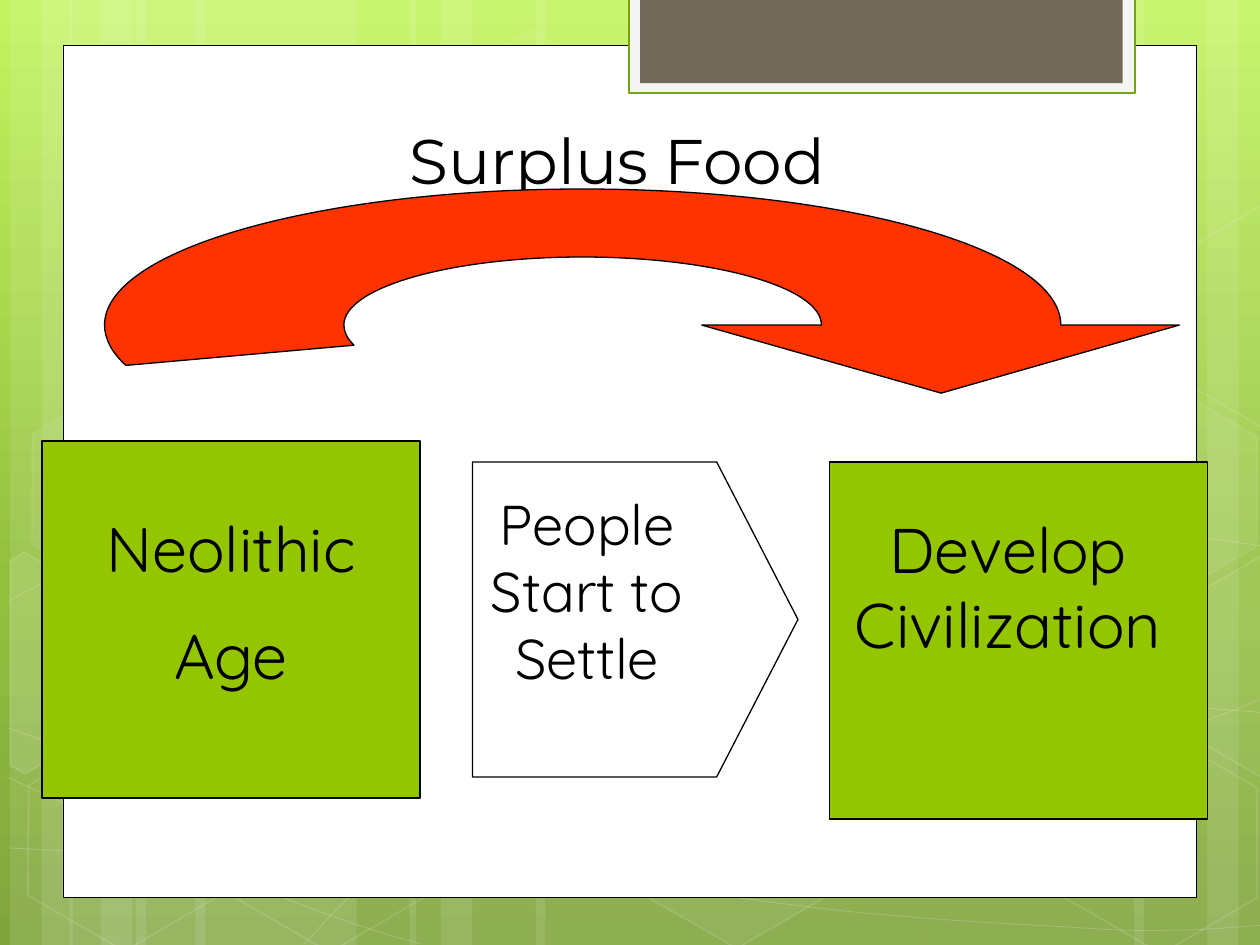
import math

from lxml import etree
from pptx import Presentation
from pptx.dml.color import RGBColor
from pptx.enum import shapes, text
from pptx.oxml.ns import qn
from pptx.util import Inches, Pt

COLORS = {
    "white": "FFFFFF", "black": "000000", "green": "94C600", "red": "FF3300",
    "tab": "F5F5F5", "tab_line": "74A510", "brown": "71685A",
    "sky": "C3F35F", "leaf": "93BF3F", "moss": "81A53E",
}
SHAPE = shapes.MSO_SHAPE
TILT = 30

# Translucent stripes: left, width, rotation
STRIPES = [(1.08, 1.75, 0), (0.08, 0.5, 0), (0.33, 0.83, 0), (1.55, 1.75, 0),
           (0.55, 0.5, 0), (0.8, 0.83, 0), (7.33, 1.75, 180), (9.58, 0.5, 180),
           (9, 0.83, 180), (4.25, 3.08, 0), (3.25, 0.5, 0), (3.5, 0.83, 0)]

# Thin waves: start point, then Bezier control points in threes
WAVES = [
    [(0.07, 6.73), (0.61, 6.76), (1.15, 6.79), (1.9, 6.78), (2.65, 6.77),
     (3.58, 6.75), (4.58, 6.65), (5.58, 6.55), (7, 6.36), (7.92, 6.17),
     (8.83, 5.98), (9.77, 5.68), (10.07, 5.51)],
    [(0.07, 4.77), (0.36, 4.61), (0.65, 4.46), (1.21, 4.31), (1.78, 4.16),
     (2.59, 3.94), (3.47, 3.87), (4.36, 3.8), (5.44, 3.79), (6.54, 3.87),
     (7.64, 3.95), (9.47, 4.26), (10.07, 4.34)],
    [(0.06, 6.17), (1.27, 6.72), (2.47, 7.27), (3.34, 7.49)],
    [(0.07, 5.78), (0.38, 5.89), (0.7, 6), (1.28, 6.16), (1.86, 6.31),
     (2.73, 6.56), (3.57, 6.73), (4.4, 6.9), (5.45, 7.08), (6.28, 7.18),
     (7.11, 7.29), (8, 7.33), (8.53, 7.36), (9.05, 7.4), (9.19, 7.38),
     (9.45, 7.38), (9.71, 7.37), (9.89, 7.35), (10.07, 7.34)],
    [(2.42, 7.49), (2.6, 7.29), (2.78, 7.09), (3.02, 6.91), (3.26, 6.73),
     (3.6, 6.53), (3.88, 6.39), (4.16, 6.25), (4.33, 6.19), (4.7, 6.09),
     (5.06, 5.99), (5.73, 5.85), (6.08, 5.78), (6.44, 5.71), (6.49, 5.71),
     (6.8, 5.69), (7.11, 5.66), (7.6, 5.63), (7.94, 5.62), (8.29, 5.61),
     (8.86, 5.62), (9.53, 5.62), (9.71, 5.63), (9.97, 5.65), (10.06, 5.66)],
]

# Whole hexagons: left, top, fill alpha, line alpha
HEXAGONS = [(3.34, 0.36, 4, 8), (4.97, 5.89, 6, 12), (0.11, 5.91, 0, 12),
            (0.14, 3.12, 7, 8), (1.74, 5.92, 0, 12), (8.34, 5.93, 0, 12),
            (8.34, 3.14, 7, 8)]

# Hexagons cut by the slide edge: centre, points, fill alpha
CUT_RIGHT = [(9.26, 4.85), (10.01, 4.41), (10.09, 4.46), (10.09, 6.13),
             (10.02, 6.17), (9.26, 5.73)]
CUT_HEXAGONS = [
    ((0.36, 5.35), [(0.08, 4.45), (0.19, 4.38), (0.96, 4.82), (0.95, 5.7),
                    (0.2, 6.14), (0.08, 6.07)], 10),
    ((9.85, 5.2), CUT_RIGHT, 4),
    ((9.85, 2.42), [(x, y - 2.78) for x, y in CUT_RIGHT], 0),
]

# Curved arrow: inner arc, tail, outer arc, head
ARROW = [(6.52, 2.58), (6.52, 2.28), (5.67, 2.04), (4.62, 2.04),
         (3.58, 2.04), (2.73, 2.28), (2.73, 2.58),
         (2.73, 2.64), (2.76, 2.69), (2.81, 2.74), (1, 2.9),
         (0.89, 2.8), (0.83, 2.69), (0.83, 2.58),
         (0.83, 1.98), (2.53, 1.5), (4.62, 1.5),
         (6.72, 1.5), (8.42, 1.98), (8.42, 2.58),
         (9.36, 2.58), (7.47, 3.12), (5.57, 2.58)]
ARROW_CURVES = (0, 3, 6, 10, 13, 16)


def turn(points, center, degrees):
    """Points turned clockwise about a centre."""
    cx, cy = center
    c, s = math.cos(math.radians(degrees)), math.sin(math.radians(degrees))
    return [(cx + (x - cx) * c - (y - cy) * s, cy + (x - cx) * s + (y - cy) * c)
            for x, y in points]


def paint(fill, color, alpha=100):
    if color is None or alpha == 0:
        fill.background()
        return
    fill.solid()
    fill.fore_color.rgb = RGBColor.from_string(COLORS[color])
    if alpha < 100:
        rgb = fill._xPr.find(qn("a:solidFill"))[0]
        etree.SubElement(rgb, qn("a:alpha"), val=str(alpha * 1000))


def write(tf, *paragraphs, size=36, font="Quicksand", color="black",
          gap=0, anchor=text.MSO_ANCHOR.TOP, bottom=0.05):
    tf.word_wrap = True
    tf.auto_size = text.MSO_AUTO_SIZE.NONE
    tf.vertical_anchor = anchor
    tf.margin_left = tf.margin_right = Inches(0.1)
    tf.margin_top, tf.margin_bottom = Inches(0.05), Inches(bottom)
    for i, words in enumerate(paragraphs):
        p = tf.add_paragraph() if i else tf.paragraphs[0]
        p.text = words
        p.alignment = text.PP_ALIGN.CENTER
        p.space_before = Pt(gap if i else 0)
        for r in p.runs:
            r.font.size, r.font.name = Pt(size), font
            r.font.color.rgb = RGBColor.from_string(COLORS[color])


class Deck:
    def __init__(self, width, height):
        self.prs = Presentation()
        self.prs.slide_width, self.prs.slide_height = Inches(width), Inches(height)
        self.s = self.prs.slides.add_slide(self.prs.slide_layouts[5])

    def background(self, *stops):
        fill = self.s.background.fill
        fill.gradient()
        fill.gradient_angle = 270
        gs_list = self.s._element.find(".//" + qn("a:gsLst"))
        for gs in list(gs_list):
            gs_list.remove(gs)
        for pos, color in stops:
            gs = etree.SubElement(gs_list, qn("a:gs"), pos=str(pos * 1000))
            etree.SubElement(gs, qn("a:srgbClr"), val=COLORS[color])

    def style(self, sp, fill, alpha, line, weight, line_alpha):
        sp.shadow.inherit = False
        paint(sp.fill, fill, alpha)
        paint(sp.line.fill, line, line_alpha)
        if line:
            sp.line.width = Pt(weight)
        return sp

    def shape(self, kind, x, y, w, h, fill=None, alpha=100, line=None,
              weight=0.75, line_alpha=100):
        sp = self.s.shapes.add_shape(kind, *map(Inches, (x, y, w, h)))
        return self.style(sp, fill, alpha, line, weight, line_alpha)

    def outline(self, points, fill=None, alpha=100, line=None, weight=0.75,
                line_alpha=100, close=True, curves=()):
        """Segments from each index in curves on join by threes into a Bezier."""
        points = [(Inches(x), Inches(y)) for x, y in points]
        builder = self.s.shapes.build_freeform(*points[0])
        builder.add_line_segments(points[1:], close=close)
        sp = builder.convert_to_shape()
        lines = list(sp._element.iter(qn("a:lnTo")))
        for i in curves:
            lines[i].tag = qn("a:cubicBezTo")
            for extra in lines[i + 1:i + 3]:
                lines[i].append(extra[0])
                extra.getparent().remove(extra)
        return self.style(sp, fill, alpha, line, weight, line_alpha)

    def title(self, x, y, w, h, words, **fmt):
        sp = self.s.shapes.title
        sp.left, sp.top, sp.width, sp.height = map(Inches, (x, y, w, h))
        self.s.shapes._spTree.append(sp._element)  # above the backdrop
        write(sp.text_frame, words, **fmt)

    def label(self, x, y, w, h, words, **fmt):
        sp = self.s.shapes.add_textbox(*map(Inches, (x, y, w, h)))
        write(sp.text_frame, words, **fmt)


def main():
    deck = Deck(10, 7.5)

    # Backdrop
    deck.background((0, "sky"), (62, "leaf"), (100, "moss"))
    for x, w, rotation in STRIPES:
        deck.shape(SHAPE.RECTANGLE, x, 0, w, 7.5, "white", 10).rotation = rotation
    for wave in WAVES:
        deck.outline(wave, line="white", weight=0.5, line_alpha=20,
                     close=False, curves=range(0, len(wave) - 1, 3))
    for x, y, alpha, line_alpha in HEXAGONS:
        sp = deck.shape(SHAPE.HEXAGON, x, y, 1.75, 1.52, "white", alpha,
                        "white", 1, line_alpha)
        sp.adjustments[0] = 0.285
        sp.rotation = TILT
    for center, points, alpha in CUT_HEXAGONS:
        sp = deck.outline(turn(points, center, -TILT), "white", alpha, "white", 1, 12)
        sp.rotation = TILT

    # White panel and tab
    deck.shape(SHAPE.RECTANGLE, 0.5, 0.36, 9, 6.76, "white", line="black", weight=0.5)
    deck.shape(SHAPE.RECTANGLE, 4.99, -0.02, 4.02, 0.76, "tab", line="tab_line",
               weight=1.25)
    deck.shape(SHAPE.RECTANGLE, 5.08, -0.02, 3.83, 0.68, "brown")

    deck.title(1, 11 / 12, 7.8, 2.17, "Surplus Food", font="Montserrat")

    # Stages
    box_w, box_h, step_top = 3, 17 / 6, 11 / 3
    start = deck.shape(SHAPE.RECTANGLE, 1 / 3, 3.5, box_w, box_h, "green", line="black")
    write(start.text_frame, "Neolithic", "Age", gap=18,
          anchor=text.MSO_ANCHOR.MIDDLE, bottom=0.34)
    step = deck.shape(SHAPE.PENTAGON, 3.75, step_top, 31 / 12, 2.5, "white", line="black")
    step.adjustments[0] = 0.258
    deck.shape(SHAPE.RECTANGLE, 79 / 12, step_top, box_w, box_h, "green", line="black")
    deck.label(79 / 12, 4, box_h, 1.3, "Develop\vCivilization")

    # Surplus arrow
    deck.outline(ARROW, "red", line="black", curves=ARROW_CURVES)

    deck.label(3.66, 23 / 6, 2, 1.7, "People\vStart to\vSettle", size=32)

    deck.prs.save("out.pptx")


if __name__ == "__main__":
    main()
